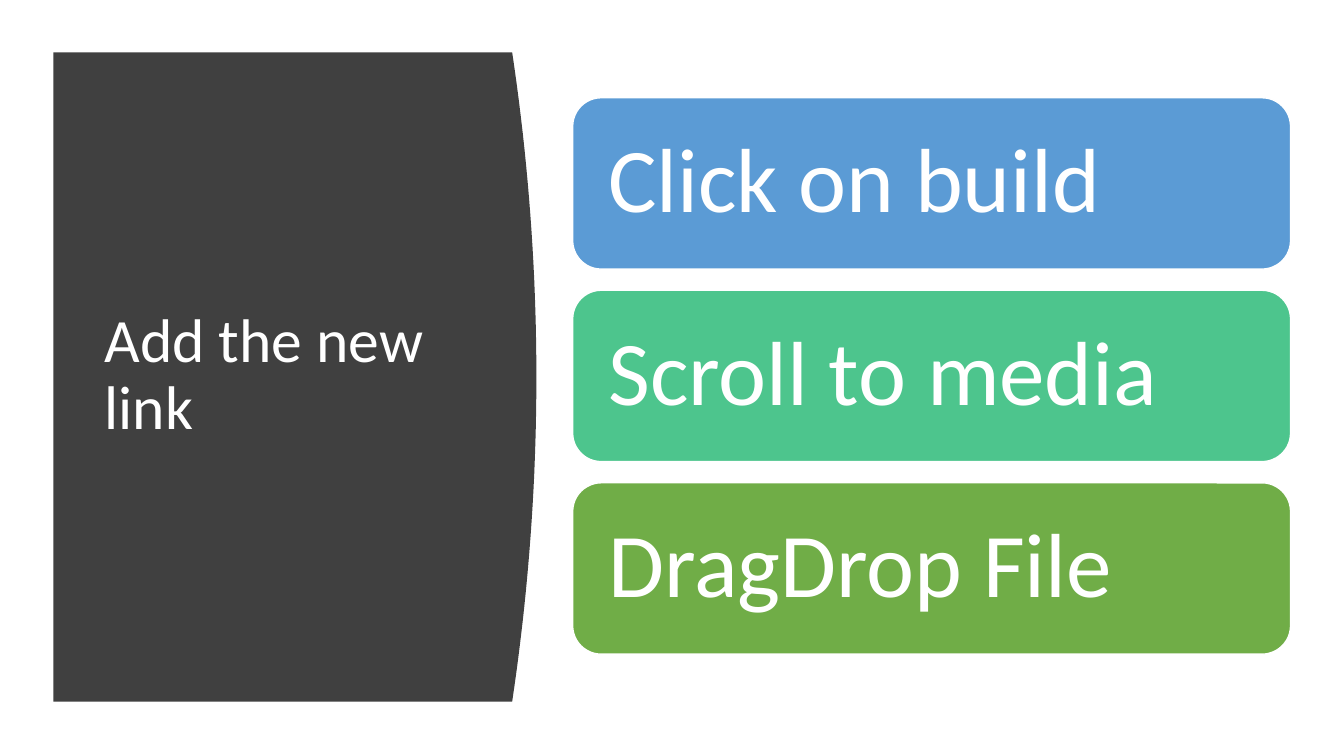
from dataclasses import dataclass

from pptx import Presentation
from pptx import util as u
from pptx.dml.color import RGBColor
from pptx.enum import shapes, text

WHITE = RGBColor(0xFF, 0xFF, 0xFF)
DARK = RGBColor(0x40, 0x40, 0x40)
BLUE = RGBColor(0x5B, 0x9B, 0xD5)
TEAL = RGBColor(0x4D, 0xC5, 0x8D)
GREEN = RGBColor(0x70, 0xAD, 0x47)

FONT = "Calibri"

# Side panel: straight left edge, bowed right edge
LEFT, TOP, EDGE, BASE = 0.53, 0.52, 5.08, 6.96
BULGE = 0.24
STEPS = 40

# Cards: equal rows
CARD_X, CARD_Y, CARD_W, CARD_H = 5.68, 0.97, 7.12, 1.7
PITCH = 1.91
INSET = 0.27


@dataclass(frozen=True)
class Card:
    label: str
    fill: RGBColor


CARDS = [
    Card("Click on build", BLUE),
    Card("Scroll to media", TEAL),
    Card("DragDrop File", GREEN),
]


def write(frame, label: str, size: int) -> None:
    """Set one left-aligned, vertically centred line of white text."""
    frame.word_wrap = True
    frame.vertical_anchor = text.MSO_ANCHOR.MIDDLE
    para = frame.paragraphs[0]
    para.text = label
    para.alignment = text.PP_ALIGN.LEFT
    para.line_spacing = 0.9
    para.font.name = FONT
    para.font.size = u.Pt(size)
    para.font.color.rgb = WHITE


def draw_panel(slide) -> None:
    """Draw the dark panel, its right edge a shallow parabola."""
    curve = []
    for step in range(STEPS + 1):
        part = step / STEPS
        bow = BULGE * 4 * part * (1 - part)
        curve.append((u.Inches(EDGE + bow), u.Inches(TOP + part * (BASE - TOP))))
    pen = slide.shapes.build_freeform(u.Inches(LEFT), u.Inches(TOP))
    pen.add_line_segments(curve + [(u.Inches(LEFT), u.Inches(BASE))], close=True)
    panel = pen.convert_to_shape()
    panel.shadow.inherit = False
    panel.fill.solid()
    panel.fill.fore_color.rgb = DARK
    panel.line.fill.background()


def draw_title(slide, label: str) -> None:
    box = slide.shapes.add_textbox(
        u.Inches(0.94), u.Inches(1.11), u.Inches(3.74), u.Inches(5.24))
    write(box.text_frame, label, 44)


def draw_card(slide, card: Card, row: int) -> None:
    shape = slide.shapes.add_shape(
        shapes.MSO_SHAPE.ROUNDED_RECTANGLE,
        u.Inches(CARD_X), u.Inches(CARD_Y + row * PITCH),
        u.Inches(CARD_W), u.Inches(CARD_H))
    shape.shadow.inherit = False
    shape.fill.solid()
    shape.fill.fore_color.rgb = card.fill
    shape.line.color.rgb = WHITE
    shape.line.width = u.Pt(1)
    frame = shape.text_frame
    frame.margin_left = frame.margin_right = u.Inches(INSET)
    frame.margin_top = frame.margin_bottom = u.Inches(INSET)
    write(frame, card.label, 65)


def main() -> None:
    deck = Presentation()
    deck.slide_width = u.Inches(13.33)
    deck.slide_height = u.Inches(7.5)
    slide = deck.slides.add_slide(deck.slide_layouts[6])

    # Left side
    draw_panel(slide)
    draw_title(slide, "Add the new link")

    # Right side
    for row, card in enumerate(CARDS):
        draw_card(slide, card, row)

    deck.save("out.pptx")


if __name__ == "__main__":
    main()
